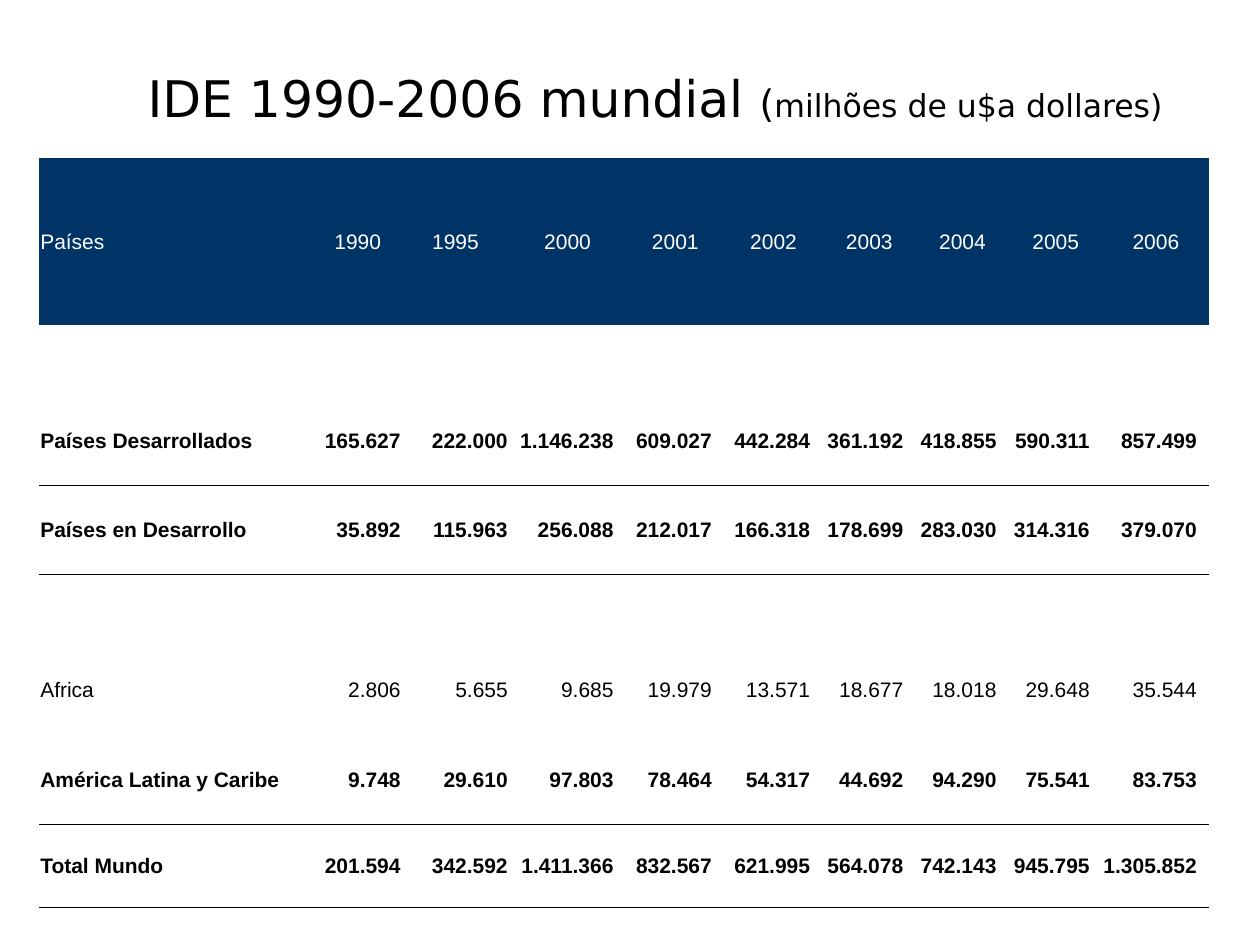
from lxml import etree
from pptx import Presentation
from pptx import util as u
from pptx.dml.color import RGBColor
from pptx.enum import text
from pptx.oxml import ns


def color(hex_code):
    return RGBColor.from_string(hex_code)


def rule_below(cell, hex_code):
    line = etree.SubElement(cell._tc.get_or_add_tcPr(), ns.qn("a:lnB"), w=str(u.Pt(0.5)))
    solid = etree.SubElement(line, ns.qn("a:solidFill"))
    etree.SubElement(solid, ns.qn("a:srgbClr"), val=hex_code)


INK, NAVY, WHITE = "000000", "003366", "FFFFFF"
NO_STYLE_NO_GRID = "{2D5ABB26-0587-4C30-8999-92F81FD0307C}"

deck = Presentation()
deck.slide_width, deck.slide_height = u.Inches(10), u.Inches(7.5)
slide = deck.slides.add_slide(deck.slide_layouts[5])

heading = slide.shapes.title
heading.left, heading.top = u.Inches(0.67), u.Inches(0.29)
heading.width, heading.height = u.Inches(9.06), u.Inches(0.96)
heading.text_frame.vertical_anchor = text.MSO_ANCHOR.MIDDLE
heading.text_frame.auto_size = text.MSO_AUTO_SIZE.NONE
heading_line = heading.text_frame.paragraphs[0]
heading_line.alignment = text.PP_ALIGN.CENTER
for words, size in [
    ("IDE 1990-2006 mundial ", 28.8),
    ("(", 21.6),
    ("milhões de u$a dollares)", 18),
]:
    run = heading_line.add_run()
    run.text = words
    run.font.size, run.font.name = u.Pt(size), "DejaVu Sans"
    run.font.color.rgb = color(INK)

investment = [
    ["Países", "1990", "1995", "2000", "2001", "2002", "2003", "2004", "2005", "2006"],
    [""] * 10,
    ["Países Desarrollados", "165.627", "222.000", "1.146.238", "609.027", "442.284",
     "361.192", "418.855", "590.311", "857.499"],
    ["Países en Desarrollo", "35.892", "115.963", "256.088", "212.017", "166.318",
     "178.699", "283.030", "314.316", "379.070"],
    [""] * 10,
    ["Africa", "2.806", "5.655", "9.685", "19.979", "13.571",
     "18.677", "18.018", "29.648", "35.544"],
    ["América Latina y Caribe", "9.748", "29.610", "97.803", "78.464", "54.317",
     "44.692", "94.290", "75.541", "83.753"],
    ["Total Mundo", "201.594", "342.592", "1.411.366", "832.567", "621.995",
     "564.078", "742.143", "945.795", "1.305.852"],
]
column_widths = [2.18, 0.7, 0.85, 0.93, 0.78, 0.78, 0.74, 0.74, 0.74, 0.85]
row_heights = [1.33, 0.56, 0.71, 0.71, 0.56, 0.71, 0.71, 0.66]
emphasized_rows = {2, 3, 6, 7}

frame = slide.shapes.add_table(
    len(investment), len(column_widths),
    u.Inches(0.31), u.Inches(1.25), u.Inches(9.3), u.Inches(5.94),
)
table = frame.table
table.first_row = table.horz_banding = False
table._tbl.tblPr.find(ns.qn("a:tableStyleId")).text = NO_STYLE_NO_GRID
for column, width in zip(table.columns, column_widths):
    column.width = u.Inches(width)

for r, (figures, height) in enumerate(zip(investment, row_heights)):
    table.rows[r].height = u.Inches(height)
    for c, figure in enumerate(figures):
        cell = table.cell(r, c)
        if r in emphasized_rows:
            rule_below(cell, INK)
        if r == 0:
            cell.fill.solid()
            cell.fill.fore_color.rgb = color(NAVY)
        else:
            cell.fill.background()
        if not figure:
            continue
        padded = r > 0 and c >= 3
        cell.vertical_anchor = text.MSO_ANCHOR.MIDDLE
        cell.margin_left = u.Inches(0 if padded else 0.01)
        cell.margin_right = u.Inches(0.1 if padded else 0.01)
        cell.margin_top, cell.margin_bottom = u.Inches(0.01), u.Inches(0)
        entry = cell.text_frame.paragraphs[0]
        if c > 0:
            entry.alignment = text.PP_ALIGN.RIGHT if r else text.PP_ALIGN.CENTER
        run = entry.add_run()
        run.text = figure
        run.font.size, run.font.name = u.Pt(12), "Arial"
        run.font.bold = r in emphasized_rows
        run.font.color.rgb = color(INK if r else WHITE)

deck.save("out.pptx")
